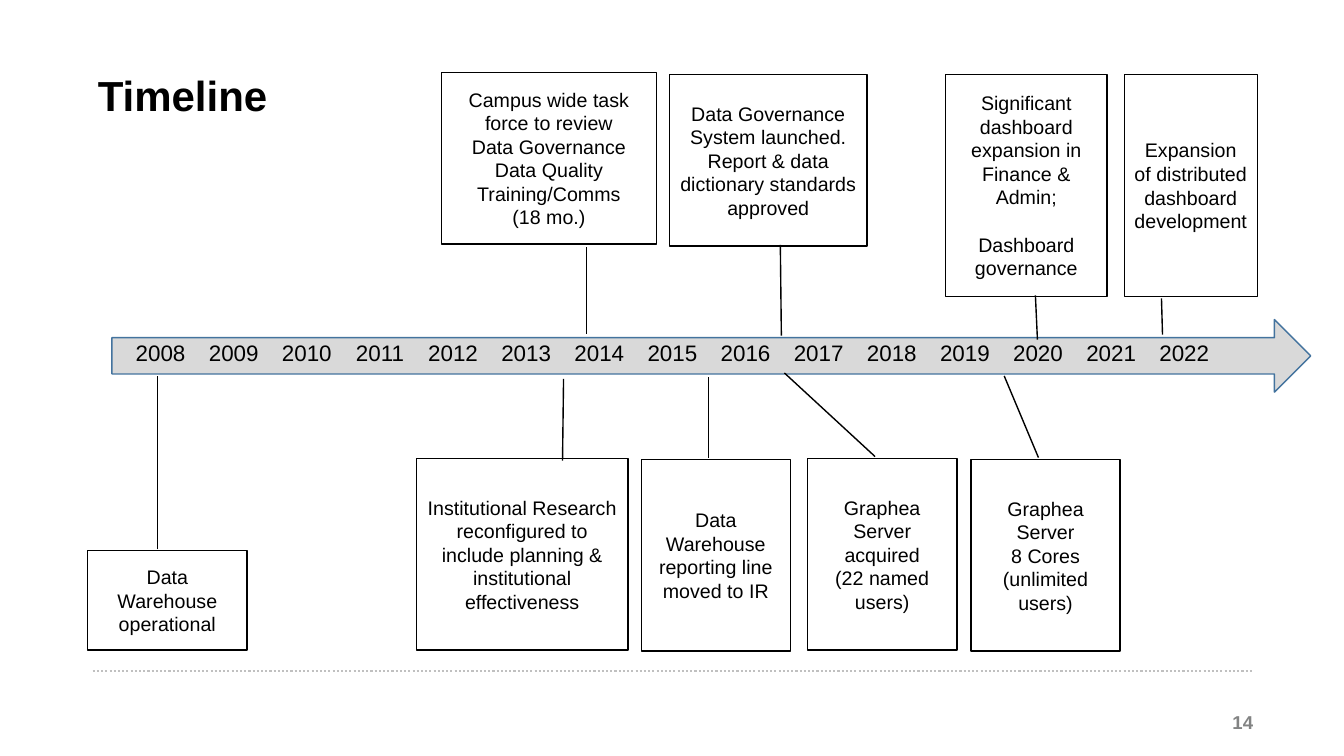
from lxml.etree import SubElement
from pptx import Presentation
from pptx.dml.color import RGBColor
from pptx.enum.dml import MSO_LINE
from pptx.enum.shapes import MSO_CONNECTOR, MSO_SHAPE
from pptx.enum.text import MSO_ANCHOR, MSO_AUTO_SIZE, PP_ALIGN
from pptx.oxml.ns import qn
from pptx.util import Emu, Pt

PX = 9144  # 100 px to the inch
BLACK, WHITE = "000000", "FFFFFF"
NO_STYLE = "{2D5ABB26-0587-4C30-8999-92F81FD0307C}"


def box(*vals):
    """Turn px lengths into EMU."""
    return [Emu(v * PX) for v in vals]


def write(frame, *lines, size=14, color=BLACK, bold=False,
          align=PP_ALIGN.CENTER, anchor=MSO_ANCHOR.MIDDLE):
    """Fill a text frame, one paragraph a line."""
    frame.word_wrap = True
    frame.auto_size = MSO_AUTO_SIZE.NONE
    frame.vertical_anchor = anchor
    frame.text = "\n".join(lines)
    for para in frame.paragraphs:
        para.alignment = align
        for run in para.runs:
            font = run.font
            font.name, font.size, font.bold = "Arial", Pt(size), bold
            font.color.rgb = RGBColor.from_string(color)


deck = Presentation()
deck.slide_width, deck.slide_height = box(1333, 750)
slide = deck.slides.add_slide(deck.slide_layouts[5])
shapes = slide.shapes

# Title, footer rule and page number
title = shapes.title
title.left, title.top, title.width, title.height = box(87, 74, 1165, 90)
write(title.text_frame, "Timeline", size=30, bold=True,
      align=PP_ALIGN.LEFT, anchor=MSO_ANCHOR.TOP)
title.text_frame.paragraphs[0].line_spacing = 0.8

rule = shapes.add_connector(MSO_CONNECTOR.STRAIGHT, *box(92, 666, 1242, 666))
rule.line.color.rgb = RGBColor.from_string("C0C0C0")
rule.line.width = Pt(1.5)
rule.line.dash_style = MSO_LINE.ROUND_DOT
SubElement(rule._element.spPr, qn("a:effectLst"))

page = shapes.add_textbox(*box(956, 696, 300, 40)).text_frame
page.margin_left, page.margin_right = box(13, 13)
write(page, "14", size=13.3, color="828383", bold=True, align=PP_ALIGN.RIGHT)

# Arrow with the years on it
arrow = shapes.add_shape(MSO_SHAPE.RIGHT_ARROW, *box(111, 317, 1189, 72))
arrow.shadow.inherit = False
arrow.fill.solid()
arrow.fill.fore_color.rgb = RGBColor.from_string("D9D9D9")
arrow.line.color.rgb = RGBColor.from_string("43739E")
arrow.line.width = Pt(1)

years = range(2008, 2023)
table = shapes.add_table(1, len(years), *box(123, 334, 1088, 41)).table
table.first_row = table.horz_banding = False
table._tbl.tblPr.find(qn("a:tableStyleId")).text = NO_STYLE
for cell, year in zip(table.rows[0].cells, years):
    cell.fill.background()
    cell.vertical_anchor = MSO_ANCHOR.TOP
    write(cell.text_frame, str(year), size=16, anchor=MSO_ANCHOR.TOP)

# Each event: box (left, top, width, height), leader (x1, y1, x2, y2), lines
events = [
    ((87, 546, 158, 99), (156, 545, 156, 373),
     ["Data Warehouse operational"]),
    ((413, 455, 210, 190), (558, 457, 559, 376),
     ["Institutional Research reconfigured to include planning & "
      "institutional effectiveness"]),
    ((636, 456, 148, 190), (703, 454, 703, 374),
     ["Data Warehouse reporting line moved to IR"]),
    ((438, 72, 213, 170), (582, 331, 582, 245),
     ["Campus wide task force to review", "Data Governance",
      "Data Quality", "Training/Comms", "(18 mo.)"]),
    ((664, 74, 196, 170), (775, 333, 774, 243),
     ["Data Governance System launched.",
      "Report & data dictionary standards approved"]),
    ((801, 455, 148, 190), (868, 453, 778, 370),
     ["Graphea Server acquired", "(22 named users)"]),
    ((963, 456, 148, 190), (1030, 454, 996, 373),
     ["Graphea Server", "8 Cores", "(unlimited users)"]),
    ((938, 74, 160, 220), (1029, 337, 1027, 293),
     ["Significant dashboard expansion in Finance & Admin;",
      "Dashboard governance"]),
    ((1115, 74, 132, 220), (1153, 332, 1152, 296),
     ["Expansion of distributed dashboard", "development"]),
]
for (left, top, width, height), (x1, y1, x2, y2), lines in events:
    note = shapes.add_shape(MSO_SHAPE.LINE_CALLOUT_1,
                            *box(left, top, width, height))
    ends = ((y1 - top) / height, (x1 - left) / width,
            (y2 - top) / height, (x2 - left) / width)
    for i, end in enumerate(ends):
        note.adjustments[i] = end
    note.shadow.inherit = False
    note.fill.solid()
    note.fill.fore_color.rgb = RGBColor.from_string(WHITE)
    note.line.color.rgb = RGBColor.from_string(BLACK)
    note.line.width = Pt(1)
    write(note.text_frame, *lines)
    if lines[-1] == "Dashboard governance":
        note.text_frame.paragraphs[-1].space_before = Pt(17)

deck.save("out.pptx")
